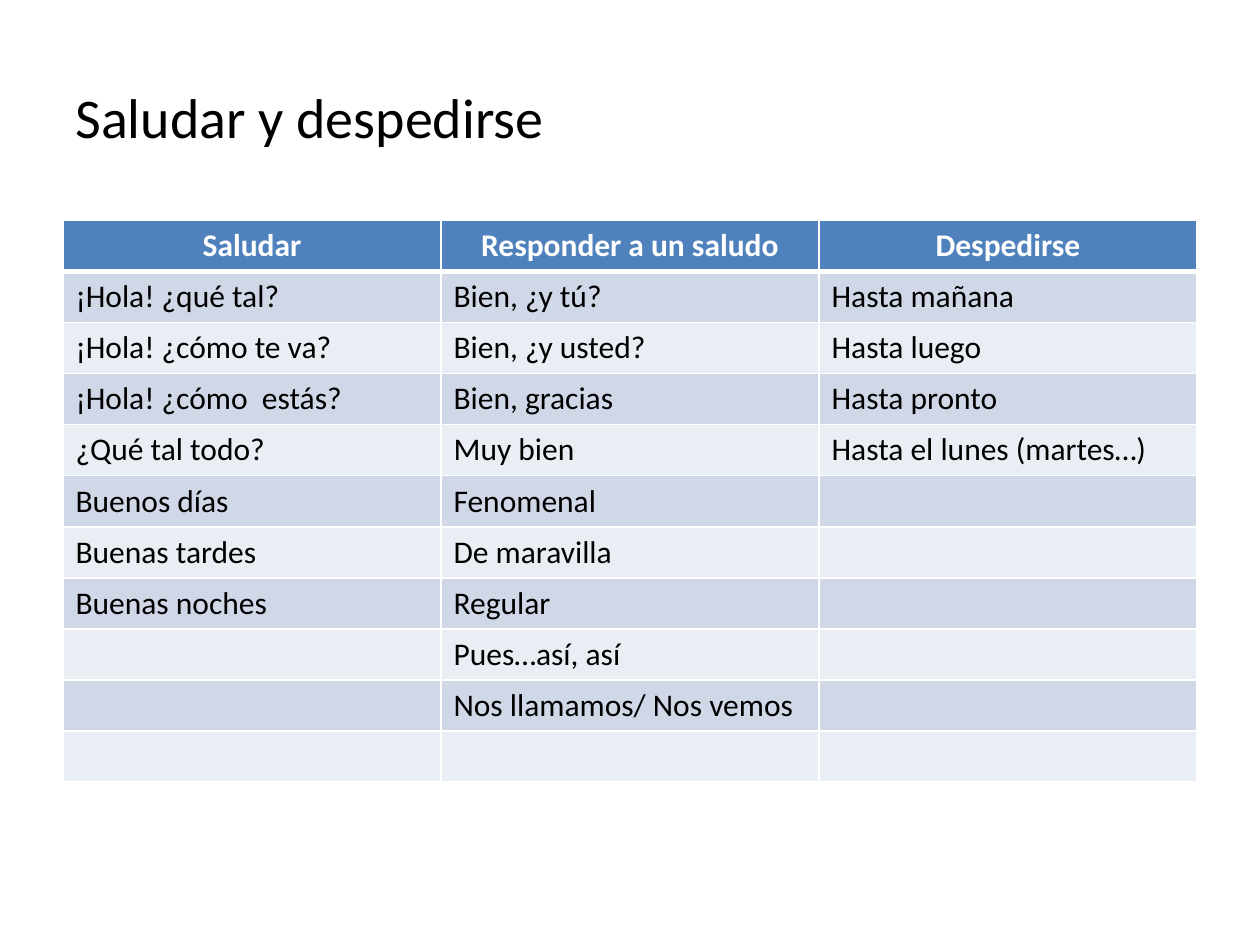
import itertools

import pptx
import pptx.dml.color
import pptx.enum.text
import pptx.oxml
import pptx.oxml.ns
import pptx.util
from pptx.util import Inches

FONT = "Calibri"
COLORS = {
    "text": "000000",
    "header": "4F81BD",
    "header_text": "FFFFFF",
    "odd_row": "D0D8E8",
    "even_row": "E9EDF4",
    "border": "FFFFFF",
}
HEADINGS = ["Saludar", "Responder a un saludo", "Despedirse"]
PHRASES = [
    ["¡Hola! ¿qué tal?", "¡Hola! ¿cómo te va?", "¡Hola! ¿cómo  estás?",
     "¿Qué tal todo?", "Buenos días", "Buenas tardes", "Buenas noches"],
    ["Bien, ¿y tú?", "Bien, ¿y usted?", "Bien, gracias", "Muy bien", "Fenomenal",
     "De maravilla", "Regular", "Pues…así, así", "Nos llamamos/ Nos vemos"],
    ["Hasta mañana", "Hasta luego", "Hasta pronto", "Hasta el lunes (martes…)"],
]
BODY_ROWS = 10
ROW_HEIGHT = 4.46 / (BODY_ROWS + 1)


def color(name):
    return pptx.dml.color.RGBColor.from_string(COLORS[name])


def add_text(paragraph, text, size, color_name, bold=False):
    run = paragraph.add_run()
    run.text = text
    run.font.name = FONT
    run.font.size = pptx.util.Pt(size)
    run.font.bold = bold
    run.font.color.rgb = color(color_name)


def set_borders(cell, top, bottom):
    """Draw the four cell borders; widths in points. Call before filling."""
    properties = cell._tc.get_or_add_tcPr()
    for side, width in (("L", 1), ("R", 1), ("T", top), ("B", bottom)):
        properties.append(pptx.oxml.parse_xml(
            f'<a:ln{side} {pptx.oxml.ns.nsdecls("a")} w="{pptx.util.Pt(width)}">'
            f'<a:solidFill><a:srgbClr val="{COLORS["border"]}"/></a:solidFill>'
            f'</a:ln{side}>'))


def add_title(slide, left, top, width, height):
    title = slide.shapes.add_textbox(
        Inches(left), Inches(top), Inches(width), Inches(height)).text_frame
    title.word_wrap = True
    title.vertical_anchor = pptx.enum.text.MSO_ANCHOR.MIDDLE
    add_text(title.paragraphs[0], "Saludar y despedirse", 32, "text")


def add_phrase_table(slide, left, top, width, height):
    rows = [HEADINGS, *itertools.zip_longest(*PHRASES, fillvalue="")]
    rows += [[""] * len(HEADINGS)] * (BODY_ROWS + 1 - len(rows))
    table = slide.shapes.add_table(
        len(rows), len(HEADINGS),
        Inches(left), Inches(top), Inches(width), Inches(height)).table
    for column in table.columns:
        column.width = Inches(width / len(HEADINGS))
    for row in table.rows:
        row.height = Inches(height / len(rows))

    for r, texts in enumerate(rows):
        is_header = r == 0
        fill = "header" if is_header else "odd_row" if r % 2 else "even_row"
        for c, text in enumerate(texts):
            cell = table.cell(r, c)
            # A thick rule parts the header from the body
            set_borders(cell, top=3 if r == 1 else 1, bottom=3 if is_header else 1)
            cell.fill.solid()
            cell.fill.fore_color.rgb = color(fill)
            paragraph = cell.text_frame.paragraphs[0]
            if is_header:
                paragraph.alignment = pptx.enum.text.PP_ALIGN.CENTER
            if text:
                add_text(paragraph, text, 18,
                         "header_text" if is_header else "text", is_header)


def main():
    presentation = pptx.Presentation()
    presentation.slide_width = Inches(10)
    presentation.slide_height = Inches(7.5)
    slide = presentation.slides.add_slide(presentation.slide_layouts[6])
    add_title(slide, 0.5, 0.3, 9, 1.25)
    add_phrase_table(slide, 0.5, 1.75, 9, ROW_HEIGHT * (BODY_ROWS + 1))
    presentation.save("out.pptx")


if __name__ == "__main__":
    main()
